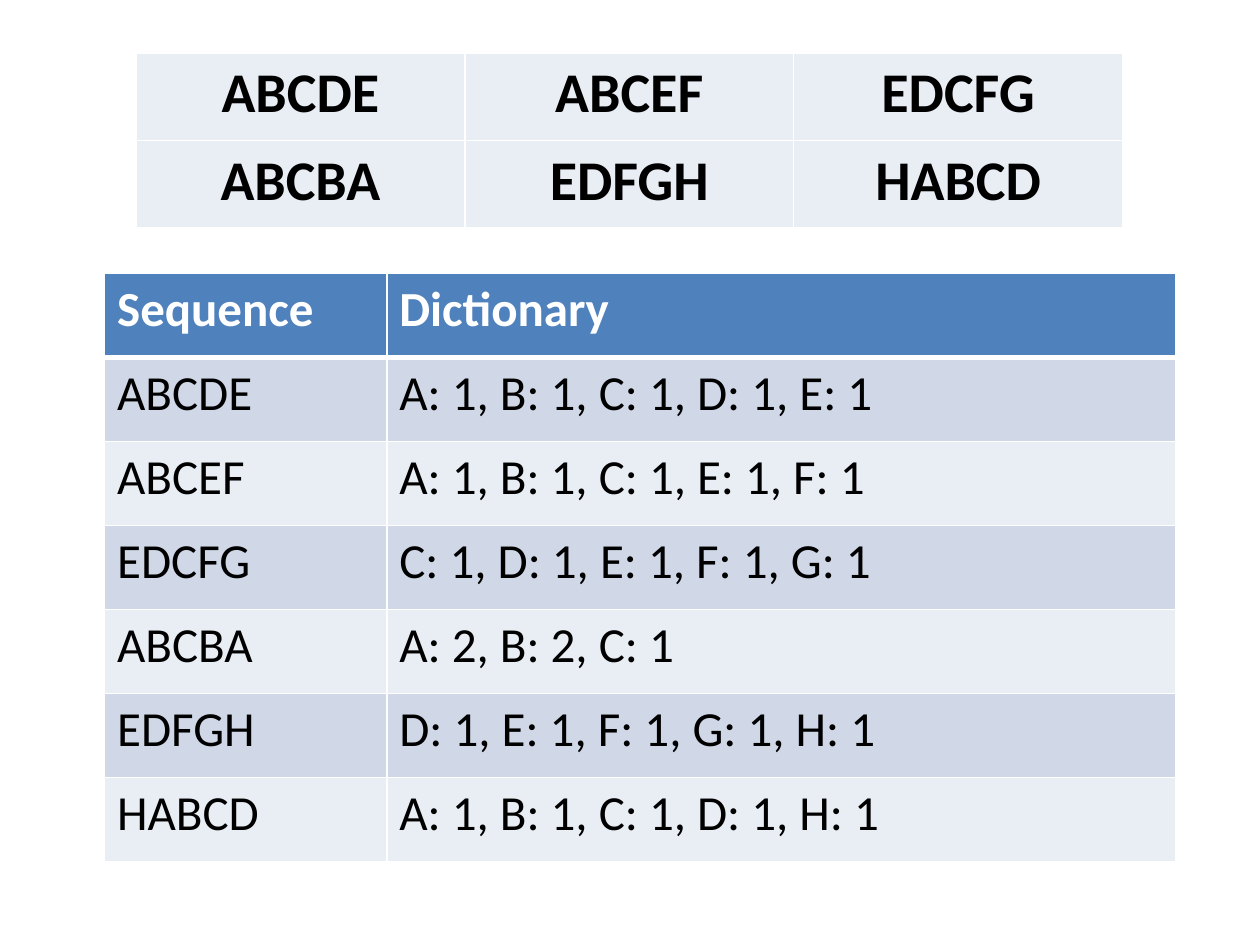
"""Build a slide listing letter sequences and their letter-count dictionaries."""
import collections

import lxml.etree
import pptx
import pptx.dml.color
import pptx.enum.text
import pptx.oxml.ns
import pptx.util
from pptx.util import Inches

WHITE = pptx.dml.color.RGBColor(0xFF, 0xFF, 0xFF)
BLACK = pptx.dml.color.RGBColor(0x00, 0x00, 0x00)
BLUE = pptx.dml.color.RGBColor(0x4F, 0x81, 0xBD)
BAND_DARK = pptx.dml.color.RGBColor(0xD0, 0xD8, 0xE8)
BAND_LIGHT = pptx.dml.color.RGBColor(0xE9, 0xED, 0xF4)


def add_borders(cell, widths):
    properties = cell._tc.get_or_add_tcPr()
    for index, (side, points) in enumerate(widths.items()):
        line = lxml.etree.Element(
            pptx.oxml.ns.qn(f"a:ln{side}"), w=str(pptx.util.Pt(points)))
        fill = lxml.etree.SubElement(line, pptx.oxml.ns.qn("a:solidFill"))
        lxml.etree.SubElement(fill, pptx.oxml.ns.qn("a:srgbClr"), val=str(WHITE))
        properties.insert(index, line)


def format_cell(cell, text, size, color, fill, bold, bottom=1, top=1):
    cell.text = text
    cell.fill.solid()
    cell.fill.fore_color.rgb = fill
    add_borders(cell, {"L": 1, "R": 1, "T": top, "B": bottom})
    font = cell.text_frame.paragraphs[0].font
    font.name = "Calibri"
    font.size = pptx.util.Pt(size)
    font.bold = bold
    font.color.rgb = color


sequences = ["ABCDE", "ABCEF", "EDCFG", "ABCBA", "EDFGH", "HABCD"]

deck = pptx.Presentation()
deck.slide_width = Inches(10)
deck.slide_height = Inches(7.5)
slide = deck.slides.add_slide(deck.slide_layouts[6])

sequence_table = slide.shapes.add_table(
    2, 3, Inches(1.08), Inches(0.42), Inches(7.83), Inches(1.39)).table
sequence_table.first_row = False
for cell, sequence in zip(sequence_table.iter_cells(), sequences):
    format_cell(cell, sequence, 32, BLACK, BAND_LIGHT, True)
    cell.text_frame.paragraphs[0].alignment = pptx.enum.text.PP_ALIGN.CENTER

rows = [("Sequence", "Dictionary")]
for sequence in sequences:
    counts = sorted(collections.Counter(sequence).items())
    rows.append((sequence, ", ".join(f"{letter}: {count}" for letter, count in counts)))

dictionary_table = slide.shapes.add_table(
    len(rows), 2, Inches(0.83), Inches(2.17), Inches(8.5), Inches(4.67)).table
dictionary_table.columns[0].width = Inches(2.24)
dictionary_table.columns[1].width = Inches(6.26)
for row, texts in enumerate(rows):
    for column, text in enumerate(texts):
        cell = dictionary_table.cell(row, column)
        if row == 0:
            format_cell(cell, text, 28, WHITE, BLUE, True, bottom=3)
        else:
            band = BAND_DARK if row % 2 else BAND_LIGHT
            format_cell(cell, text, 28, BLACK, band, False, top=3 if row == 1 else 1)

deck.save("out.pptx")
